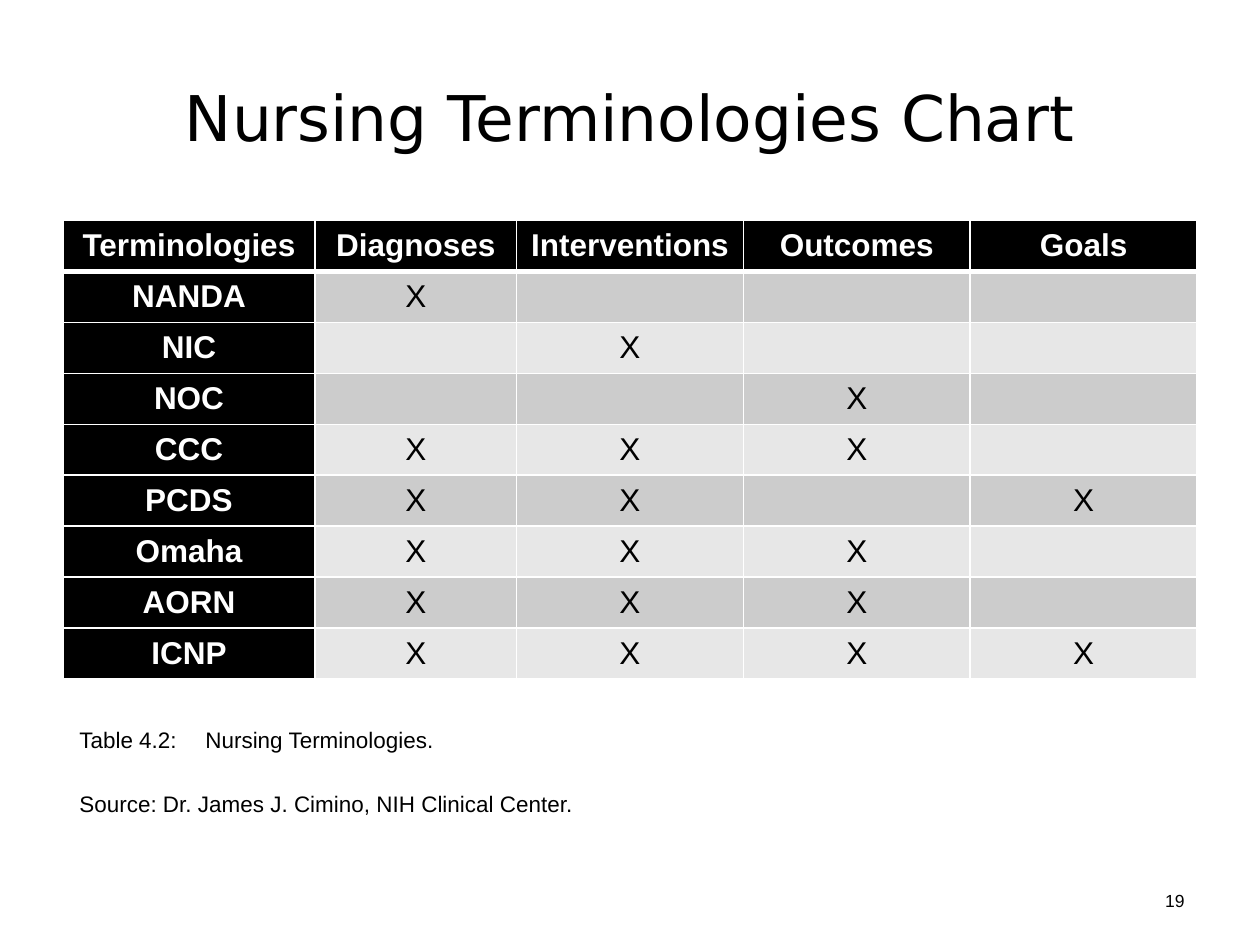
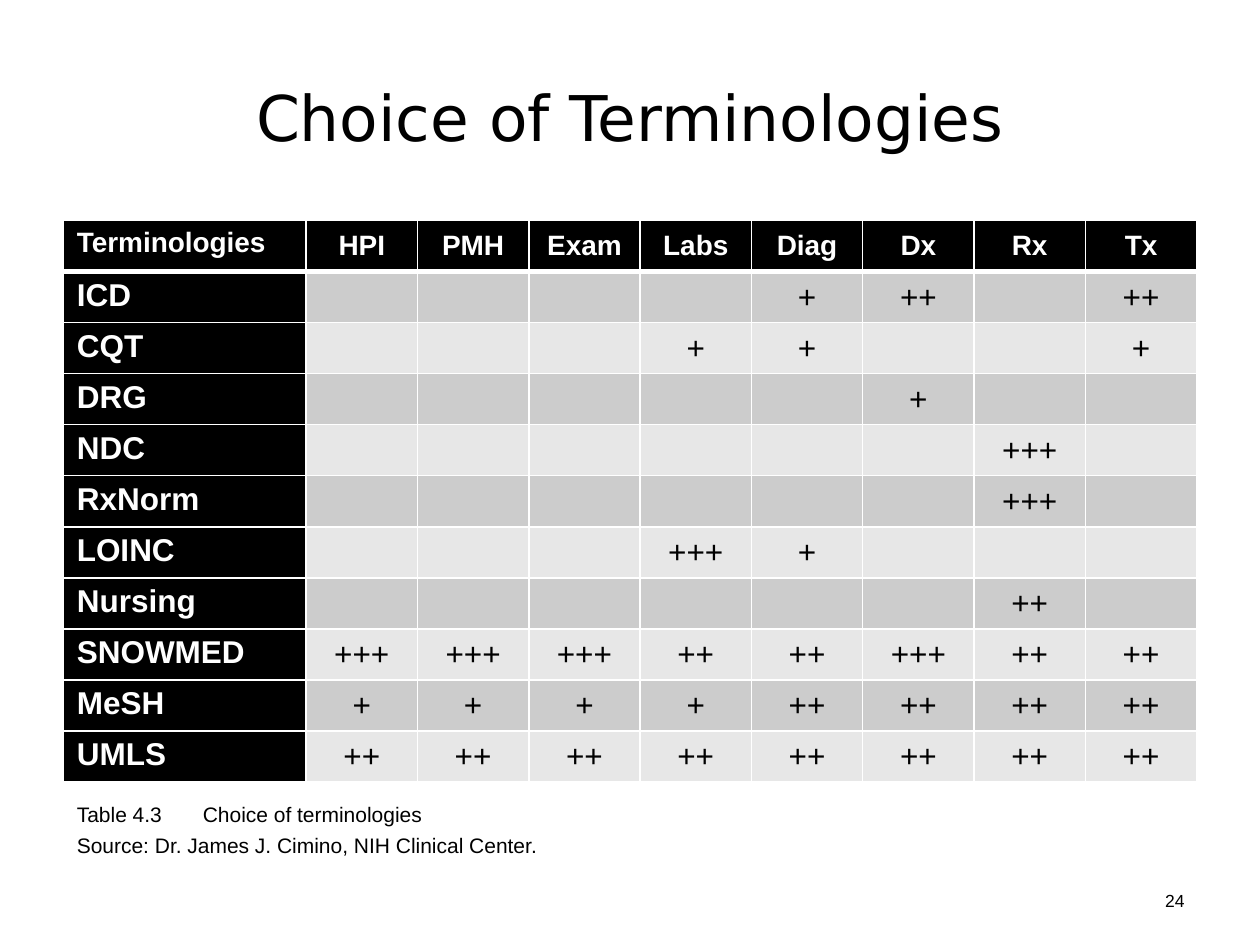
"""Build two slides with tables of clinical terminologies."""
from pptx import Presentation
from pptx.dml.color import RGBColor
from pptx.enum.text import MSO_ANCHOR, MSO_AUTO_SIZE, PP_ALIGN
from pptx.oxml.ns import qn
from pptx.util import Inches, Pt
from lxml import etree

LEFT, CENTER, RIGHT = PP_ALIGN.LEFT, PP_ALIGN.CENTER, PP_ALIGN.RIGHT
TOP, MIDDLE = MSO_ANCHOR.TOP, MSO_ANCHOR.MIDDLE
NO_FIT = MSO_AUTO_SIZE.NONE

COLORS = {"ink": "000000", "paper": "FFFFFF", "odd": "CCCCCC", "even": "E7E7E7"}
TITLE_FONT, TEXT_FONT = "DejaVu Sans", "Arial"
TABLE_LEFT, TABLE_TOP, TABLE_WIDTH = 0.5, 1.75, 9
SOURCE = "Source: Dr. James J. Cimino, NIH Clinical Center."

NURSING_HEADERS = ["Terminologies", "Diagnoses", "Interventions", "Outcomes", "Goals"]
NURSING_ROWS = [
    ["NANDA", "X", "", "", ""],
    ["NIC", "", "X", "", ""],
    ["NOC", "", "", "X", ""],
    ["CCC", "X", "X", "X", ""],
    ["PCDS", "X", "X", "", "X"],
    ["Omaha", "X", "X", "X", ""],
    ["AORN", "X", "X", "X", ""],
    ["ICNP", "X", "X", "X", "X"],
]

CHOICE_HEADERS = ["Terminologies", "HPI", "PMH", "Exam", "Labs", "Diag", "Dx", "Rx", "Tx"]
CHOICE_ROWS = [
    ["ICD", "", "", "", "", "+", "++", "", "++"],
    ["CQT", "", "", "", "+", "+", "", "", "+"],
    ["DRG", "", "", "", "", "", "+", "", ""],
    ["NDC", "", "", "", "", "", "", "+++", ""],
    ["RxNorm", "", "", "", "", "", "", "+++", ""],
    ["LOINC", "", "", "", "+++", "+", "", "", ""],
    ["Nursing", "", "", "", "", "", "", "++", ""],
    ["SNOWMED", "+++", "+++", "+++", "++", "++", "+++", "++", "++"],
    ["MeSH", "+", "+", "+", "+", "++", "++", "++", "++"],
    ["UMLS"] + ["++"] * 8,
]


def place(shape, left, top, width, height):
    """Move and size a shape, in inches."""
    shape.left, shape.top = Inches(left), Inches(top)
    shape.width, shape.height = Inches(width), Inches(height)


def add_span(para, text, size, color="ink", font=TEXT_FONT, bold=False):
    """Add one formatted run to a paragraph."""
    span = para.add_run()
    span.text = text
    span.font.size, span.font.name, span.font.bold = Pt(size), font, bold
    span.font.color.rgb = RGBColor.from_string(COLORS[color])


def add_page(deck, title, number):
    """Add a slide with its title and slide number."""
    page = deck.slides.add_slide(deck.slide_layouts[1])
    heading = page.shapes.title
    place(heading, 0.5, 0.3, 9, 1.25)
    heading.text_frame.auto_size = NO_FIT
    heading.text_frame.vertical_anchor = MIDDLE
    para = heading.text_frame.paragraphs[0]
    para.alignment = CENTER
    add_span(para, title, 36, font=TITLE_FONT)

    box = page.shapes.add_textbox(Inches(8.94), Inches(6.85), Inches(0.56), Inches(0.6))
    box.text_frame.word_wrap = True
    box.text_frame.vertical_anchor = MIDDLE
    para = box.text_frame.paragraphs[0]
    para.alignment = RIGHT
    add_span(para, str(number), 10)
    return page


def add_caption(page, area, label, name, size, gap, tab):
    """Fill the body placeholder with the table caption and its source."""
    body = page.placeholders[1]
    place(body, *area)
    frame = body.text_frame
    frame.auto_size = NO_FIT
    frame.vertical_anchor = TOP
    for index, text in enumerate([f"{label}\t{name}", SOURCE]):
        para = frame.add_paragraph() if index else frame.paragraphs[0]
        para.alignment = LEFT
        para.space_before = Pt(gap if index else 0)
        add_span(para, text, size)
        props = para._p.get_or_add_pPr()
        props.set("marL", "0")
        props.set("indent", "0")
        etree.SubElement(props, qn("a:buNone"))
        tabs = etree.SubElement(props, qn("a:tabLst"))
        etree.SubElement(tabs, qn("a:tab"), pos=str(Inches(tab)), algn="l")


def set_borders(cell, top, bottom):
    """Draw white cell borders; top and bottom widths are in points."""
    props = cell._tc.get_or_add_tcPr()
    for side, width in (("L", 1), ("R", 1), ("T", top), ("B", bottom)):
        line = etree.SubElement(props, qn(f"a:ln{side}"), w=str(Pt(width)))
        fill = etree.SubElement(line, qn("a:solidFill"))
        etree.SubElement(fill, qn("a:srgbClr"), val=COLORS["paper"])


def add_grid(page, rows, widths, height, header_size, margin, name_align, name_anchor):
    """Add a table with a dark header row, dark first column and banded rows."""
    frame = page.shapes.add_table(len(rows), len(widths), Inches(TABLE_LEFT),
                                  Inches(TABLE_TOP), Inches(TABLE_WIDTH), Inches(height))
    table = frame.table
    for column, width in zip(table.columns, widths):
        column.width = Inches(width)
    for r, values in enumerate(rows):
        table.rows[r].height = Inches(height / len(rows))
        for c, value in enumerate(values):
            cell = table.cell(r, c)
            dark = r == 0 or c == 0
            set_borders(cell, 3 if r == 1 else 1, 3 if r == 0 else 1)
            cell.fill.solid()
            shade = "ink" if dark else "odd" if r % 2 else "even"
            cell.fill.fore_color.rgb = RGBColor.from_string(COLORS[shade])
            cell.margin_left = cell.margin_right = Inches(margin)
            cell.margin_top = cell.margin_bottom = Inches(0.05)
            cell.vertical_anchor = MIDDLE if c else name_anchor
            para = cell.text_frame.paragraphs[0]
            para.alignment = CENTER if c else name_align
            if value:
                add_span(para, value, 18 if r else header_size,
                         "paper" if dark else "ink", bold=dark)


def main():
    """Build and save the deck."""
    deck = Presentation()
    deck.slide_width, deck.slide_height = Inches(10), Inches(7.5)

    page = add_page(deck, "Nursing Terminologies Chart", 19)
    add_grid(page, [NURSING_HEADERS] + NURSING_ROWS, [2, 1.6, 1.8, 1.8, 1.8],
             3.64, 18, 0.1, CENTER, MIDDLE)
    add_caption(page, (0.53, 5.71, 9, 0.75), "Table 4.2:", "Nursing Terminologies.",
                12.8, 21.3, 0.87)

    page = add_page(deck, "Choice of Terminologies", 24)
    name_width = 1.93
    mark_width = (TABLE_WIDTH - name_width) / 8
    add_grid(page, [CHOICE_HEADERS] + CHOICE_ROWS, [name_width] + [mark_width] * 8,
             4.46, 16, 0.11, LEFT, TOP)
    add_caption(page, (0.51, 6.31, 9, 0.77), "Table 4.3", "Choice of terminologies",
                12, 3.3, 0.82)

    deck.save("out.pptx")


if __name__ == "__main__":
    main()
